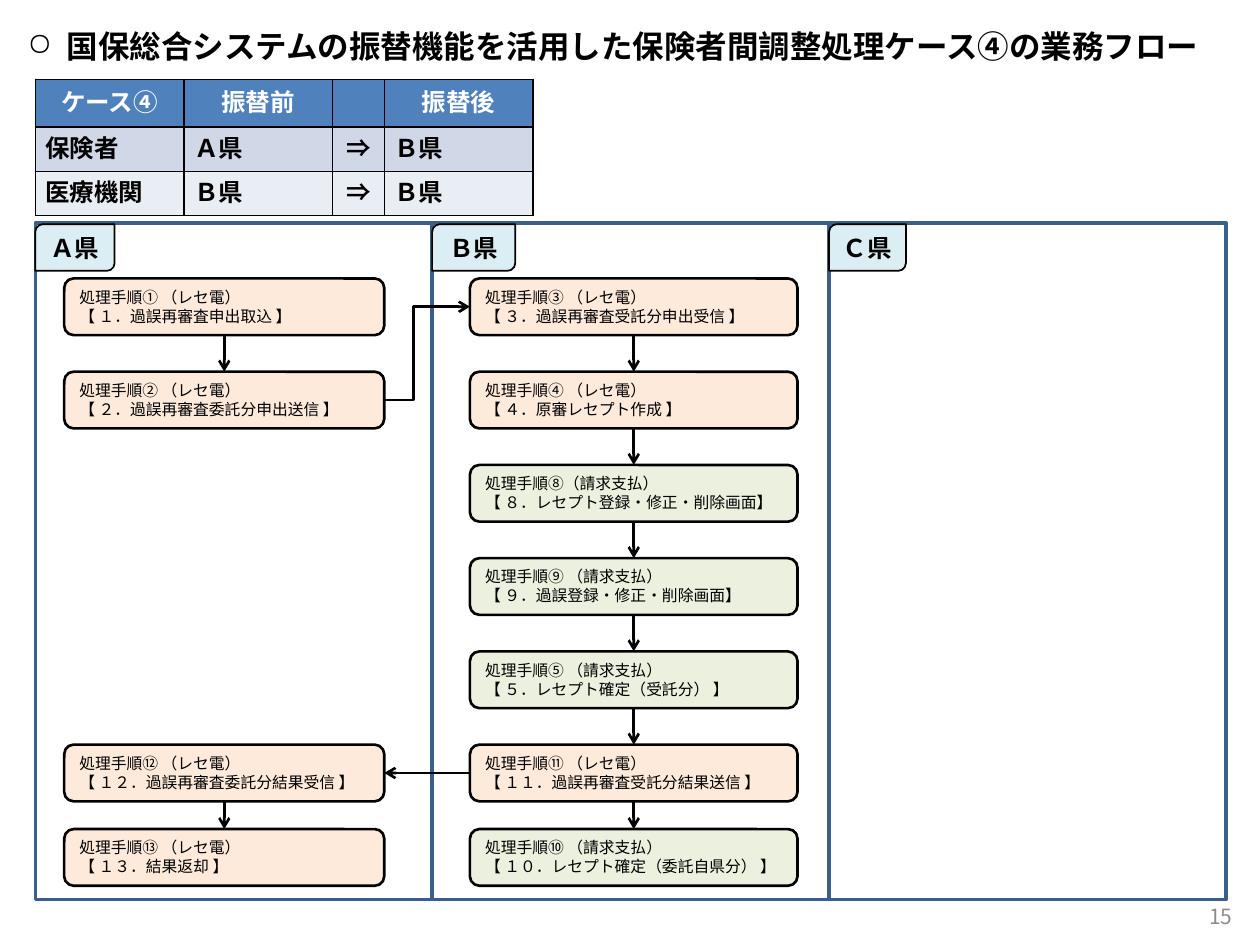
from lxml import etree
from pptx import Presentation
from pptx.dml.color import RGBColor
from pptx.enum.shapes import MSO_CONNECTOR, MSO_SHAPE
from pptx.enum.text import MSO_ANCHOR, PP_ALIGN
from pptx.oxml.ns import qn
from pptx.util import Inches, Pt

LEFT, CENTER, RIGHT = PP_ALIGN.LEFT, PP_ALIGN.CENTER, PP_ALIGN.RIGHT
TOP, MIDDLE = MSO_ANCHOR.TOP, MSO_ANCHOR.MIDDLE
RECTANGLE, ROUNDED = MSO_SHAPE.RECTANGLE, MSO_SHAPE.ROUNDED_RECTANGLE
BADGE = MSO_SHAPE.ROUND_2_DIAG_RECTANGLE
STRAIGHT, ELBOW = MSO_CONNECTOR.STRAIGHT, MSO_CONNECTOR.ELBOW
SITE_TOP, SITE_LEFT, SITE_BOTTOM, SITE_RIGHT = range(4)

FONT = "Noto Sans CJK JP"
BLACK, WHITE, GRAY = "000000", "FFFFFF", "8C8C8C"
PANEL_LINE, BADGE_FILL = "3A5F8C", "DBEEF4"
RECEIPT, PAYMENT = "FDEADA", "EBF1DE"
ROW_FILLS = ["4F81BD", "D0D8E8", "E9EDF4"]

TITLE = "国保総合システムの振替機能を活用した保険者間調整処理ケース④の業務フロー"
CASE_ROWS = [
    ["ケース④", "振替前", "", "振替後"],
    ["保険者", "Ａ県", "⇒", "Ｂ県"],
    ["医療機関", "Ｂ県", "⇒", "Ｂ県"],
]
CASE_WIDTHS = [1.18, 1.18, 0.41, 1.18]
PREFECTURES = [("Ａ県", 0.63), ("Ｂ県", 0.66), ("Ｃ県", 0.61)]
PANEL_LEFT, PANEL_TOP, PANEL_PITCH = 0.28, 1.77, 3.15

STEP_TOPS = [2.21 + 0.74 * row for row in range(6)] + [6.58]
STEPS_A = [
    (0, RECEIPT, "処理手順① （レセ電）", "【 １．過誤再審査申出取込 】"),
    (1, RECEIPT, "処理手順② （レセ電）", "【 ２．過誤再審査委託分申出送信 】"),
    (5, RECEIPT, "処理手順⑫ （レセ電）", "【 １２．過誤再審査委託分結果受信 】"),
    (6, RECEIPT, "処理手順⑬ （レセ電）", "【 １３．結果返却 】"),
]
STEPS_B = [
    (0, RECEIPT, "処理手順③ （レセ電）", "【 ３．過誤再審査受託分申出受信 】"),
    (1, RECEIPT, "処理手順④ （レセ電）", "【 ４．原審レセプト作成 】"),
    (2, PAYMENT, "処理手順⑧（請求支払）", "【 ８．レセプト登録・修正・削除画面】"),
    (3, PAYMENT, "処理手順⑨ （請求支払）", "【 ９．過誤登録・修正・削除画面】"),
    (4, PAYMENT, "処理手順⑤ （請求支払）", "【 ５．レセプト確定（受託分） 】"),
    (5, RECEIPT, "処理手順⑪ （レセ電）", "【 １１．過誤再審査受託分結果送信 】"),
    (6, PAYMENT, "処理手順⑩ （請求支払）", "【 １０．レセプト確定（委託自県分） 】"),
]


def color(value):
    return RGBColor.from_string(value)


class FlowSlide:
    def __init__(self, slide, font):
        self.slide = slide
        self.font = font

    def fill_text(self, frame, text, size, ink=BLACK, bold=False, align=LEFT, anchor=TOP):
        frame.text = text
        frame.word_wrap = True
        frame.vertical_anchor = anchor
        for paragraph in frame.paragraphs:
            paragraph.alignment = align
            for run in paragraph.runs:
                run.font.size = Pt(size)
                run.font.bold = bold
                run.font.color.rgb = color(ink)
                run.font.name = self.font
                east_asian = etree.SubElement(run._r.get_or_add_rPr(), qn("a:ea"))
                east_asian.set("typeface", self.font)

    def text(self, left, top, width, height, text, size, **style):
        box = self.slide.shapes.add_textbox(
            Inches(left), Inches(top), Inches(width), Inches(height))
        self.fill_text(box.text_frame, text, size, anchor=MIDDLE, **style)
        return box

    def title(self, text):
        box = self.text(0.12, 0.13, 9.76, 0.47, text, 18, bold=True)
        properties = box.text_frame.paragraphs[0]._p.get_or_add_pPr()
        properties.set("marL", str(Inches(0.31)))
        properties.set("indent", str(-Inches(0.31)))
        etree.SubElement(properties, qn("a:buChar")).set("char", "○")

    def shape(self, kind, left, top, width, height, fill, line, weight):
        shape = self.slide.shapes.add_shape(
            kind, Inches(left), Inches(top), Inches(width), Inches(height))
        shape.shadow.inherit = False
        if fill:
            shape.fill.solid()
            shape.fill.fore_color.rgb = color(fill)
        else:
            shape.fill.background()
        shape.line.color.rgb = color(line)
        shape.line.width = Pt(weight)
        return shape

    def badge(self, left, width, text):
        shape = self.shape(BADGE, left, 1.78, width, 0.37, BADGE_FILL, BLACK, 1)
        shape.text_frame.margin_left = shape.text_frame.margin_right = Inches(0.04)
        self.fill_text(shape.text_frame, text, 14, bold=True, align=CENTER)

    def steps(self, left, width, steps):
        boxes = {}
        for row, fill, heading, detail in steps:
            box = self.shape(ROUNDED, left, STEP_TOPS[row], width, 0.45, fill, BLACK, 1.5)
            self.fill_text(box.text_frame, f"{heading}\n{detail}", 9)
            boxes[row] = box
        for row, box in boxes.items():
            if row + 1 in boxes:
                self.arrow(box, SITE_BOTTOM, boxes[row + 1], SITE_TOP)
        return boxes

    def arrow(self, source, source_site, target, target_site, kind=STRAIGHT, bend=None):
        connector = self.slide.shapes.add_connector(kind, 0, 0, 0, 0)
        connector.begin_connect(source, source_site)
        connector.end_connect(target, target_site)
        connector.line.color.rgb = color(BLACK)
        connector.line.width = Pt(1.5)
        properties = connector._element.spPr
        line = properties.find(qn("a:ln"))
        etree.SubElement(line, qn("a:tailEnd")).set("type", "arrow")
        etree.SubElement(properties, qn("a:effectLst"))
        if bend:
            guide = etree.SubElement(properties.find(".//" + qn("a:avLst")), qn("a:gd"))
            guide.set("name", "adj1")
            guide.set("fmla", f"val {round(bend * 100000)}")

    def borders(self, cell):
        properties = cell._tc.get_or_add_tcPr()
        for position, side in enumerate(("lnL", "lnR", "lnT", "lnB")):
            line = etree.Element(qn("a:" + side), w=str(Pt(1)))
            fill = etree.SubElement(line, qn("a:solidFill"))
            etree.SubElement(fill, qn("a:srgbClr")).set("val", BLACK)
            properties.insert(position, line)

    def table(self, left, top, widths, row_height, rows):
        table = self.slide.shapes.add_table(
            len(rows), len(widths), Inches(left), Inches(top),
            Inches(sum(widths)), Inches(row_height * len(rows))).table
        for column, width in zip(table.columns, widths):
            column.width = Inches(width)
        for row_index, values in enumerate(rows):
            table.rows[row_index].height = Inches(row_height)
            for column_index, text in enumerate(values):
                cell = table.cell(row_index, column_index)
                header = row_index == 0
                cell.margin_left = cell.margin_right = Inches(0.08)
                cell.margin_top = cell.margin_bottom = Inches(0.04)
                self.fill_text(cell.text_frame, text, 14, WHITE if header else BLACK, True,
                               CENTER if header or column_index == 2 else LEFT)
                cell.vertical_anchor = MIDDLE
                cell.text_frame.paragraphs[0].line_spacing = Pt(18)
                cell.fill.solid()
                cell.fill.fore_color.rgb = color(ROW_FILLS[row_index])
                self.borders(cell)


def main():
    presentation = Presentation()
    presentation.slide_width, presentation.slide_height = Inches(10), Inches(7.5)
    flow = FlowSlide(presentation.slides.add_slide(presentation.slide_layouts[6]), FONT)

    flow.text(7.55, 7.07, 2.33, 0.4, "15", 12, ink=GRAY, align=RIGHT)
    panel_lefts = [PANEL_LEFT + PANEL_PITCH * index for index in range(len(PREFECTURES))]
    for left in panel_lefts:
        flow.shape(RECTANGLE, left, PANEL_TOP, PANEL_PITCH, 5.37, None, PANEL_LINE, 2)
    for left, (name, width) in zip(panel_lefts, PREFECTURES):
        flow.badge(left, width, name)
    flow.title(TITLE)
    flow.table(PANEL_LEFT, 0.63, CASE_WIDTHS, 0.35, CASE_ROWS)

    boxes_a = flow.steps(0.51, 2.54, STEPS_A)
    boxes_b = flow.steps(3.73, 2.6, STEPS_B)
    flow.arrow(boxes_a[1], SITE_RIGHT, boxes_b[0], SITE_LEFT, ELBOW, 0.34)
    flow.arrow(boxes_b[5], SITE_LEFT, boxes_a[5], SITE_RIGHT)
    presentation.save("out.pptx")


if __name__ == "__main__":
    main()
